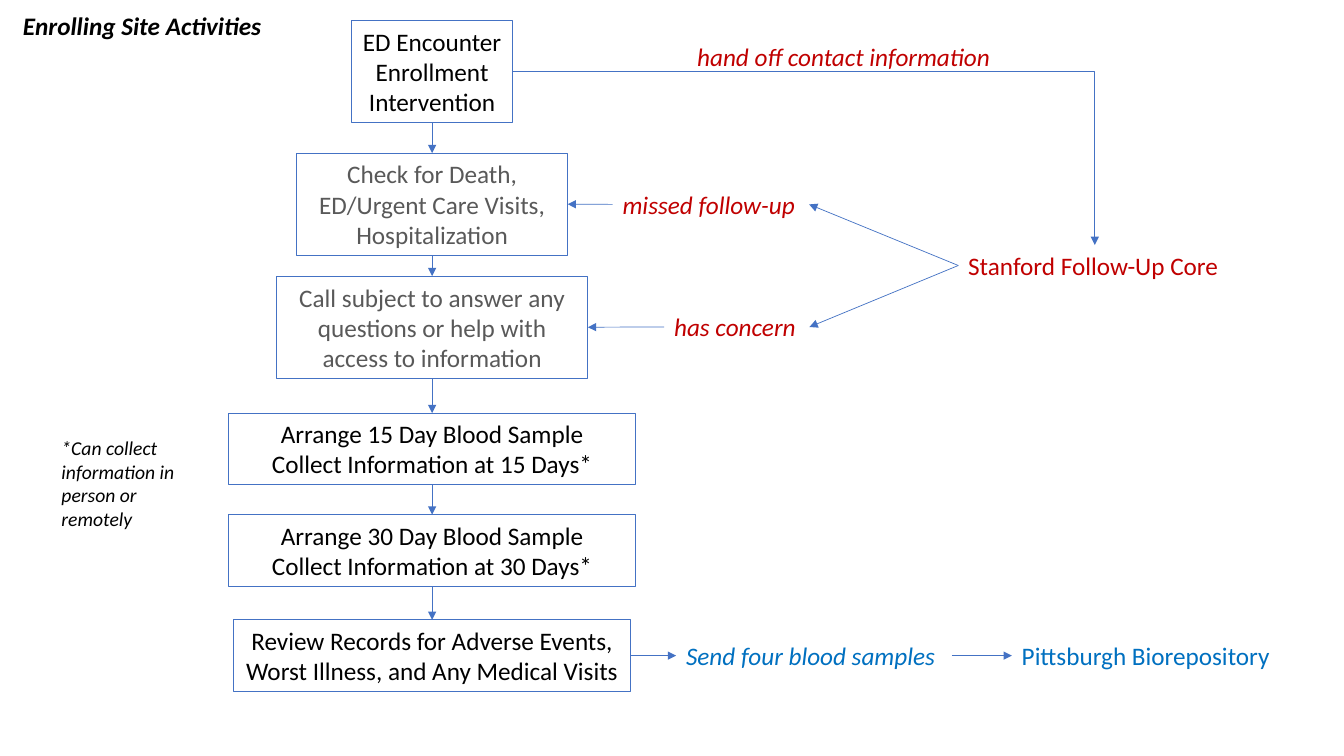
import pptx
import pptx.dml.color
import pptx.enum.shapes
import pptx.enum.text
import pptx.oxml.ns
import pptx.util
from lxml import etree

Cm, Pt = pptx.util.Cm, pptx.util.Pt
RGBColor = pptx.dml.color.RGBColor
ALIGN = pptx.enum.text.PP_ALIGN
CONNECTOR = pptx.enum.shapes.MSO_CONNECTOR
qn = pptx.oxml.ns.qn

BLACK = RGBColor(0, 0, 0)
GRAY = RGBColor(0x59, 0x59, 0x59)
RED = RGBColor(0xC0, 0, 0)
BLUE = RGBColor(0, 0x70, 0xC0)
LINE = RGBColor(0x44, 0x72, 0xC4)

TOP, LEFT, BOTTOM, RIGHT = range(4)  # connection sites of a rectangle
AXIS = 10.89  # centre of the flow column, cm
LABEL_HEIGHT = 1.03


class FlowSlide:
    font = {"name": "Calibri", "size": Pt(18)}

    def __init__(self, slide):
        self.s = slide

    def set_text(self, sp, text, color, align, wrap=True, **fmt):
        tf = sp.text_frame
        tf.word_wrap = wrap
        tf.auto_size = pptx.enum.text.MSO_AUTO_SIZE.SHAPE_TO_FIT_TEXT
        for i, line in enumerate(text.split("\n")):
            p = tf.add_paragraph() if i else tf.paragraphs[0]
            p.alignment = align
            r = p.add_run()
            r.text = line
            for key, value in {**self.font, **fmt}.items():
                setattr(r.font, key, value)
            r.font.color.rgb = color

    def box(self, text, top, width, height, color=BLACK, wrap=True):
        """Outlined step centred on the flow axis."""
        sp = self.s.shapes.add_shape(
            pptx.enum.shapes.MSO_SHAPE.RECTANGLE,
            Cm(AXIS - width / 2), Cm(top), Cm(width), Cm(height))
        sp.shadow.inherit = False
        sp.fill.background()
        sp.line.color.rgb = LINE
        sp.line.width = Pt(0.75)
        self.set_text(sp, text, color, ALIGN.CENTER, wrap)
        return sp

    def label(self, text, left, middle, width, color, height=LABEL_HEIGHT,
              wrap=False, **fmt):
        """Plain text centred vertically on a given height."""
        sp = self.s.shapes.add_textbox(
            Cm(left), Cm(middle - height / 2), Cm(width), Cm(height))
        self.set_text(sp, text, color, ALIGN.LEFT, wrap, **fmt)
        return sp

    def arrow(self, start, start_site, end, end_site, bent=False):
        kind = CONNECTOR.ELBOW if bent else CONNECTOR.STRAIGHT
        c = self.s.shapes.add_connector(kind, 0, 0, 0, 0)
        c.begin_connect(start, start_site)
        c.end_connect(end, end_site)
        c.line.color.rgb = LINE
        c.line.width = Pt(0.5)
        pr = c._element.spPr
        if bent:  # a single corner
            pr.find(qn("a:prstGeom")).set("prst", "bentConnector2")
        etree.SubElement(pr.find(qn("a:ln")), qn("a:tailEnd"), type="triangle")
        etree.SubElement(pr, qn("a:effectLst"))


def main():
    prs = pptx.Presentation()
    prs.slide_width, prs.slide_height = Cm(33.87), Cm(19.05)
    flow = FlowSlide(prs.slides.add_slide(prs.slide_layouts[6]))

    # Title and footnote
    flow.label("Enrolling Site Activities", 0.33, 0.64, 6.58, BLACK,
               bold=True, italic=True)
    flow.label("*Can collect information in person or remotely",
               1.3, 12.19, 3.43, BLACK, height=2.64, wrap=True,
               size=Pt(14), italic=True)

    # Main column of steps
    encounter = flow.box("ED Encounter\nEnrollment\nIntervention",
                         0.51, 4.04, 2.57, wrap=False)
    check = flow.box("Check for Death, ED/Urgent Care Visits, Hospitalization",
                     3.86, 6.83, 2.57, GRAY)
    call = flow.box("Call subject to answer any questions or help with "
                    "access to information", 6.96, 7.85, 2.57, GRAY)
    samples = [
        flow.box(f"Arrange {day} Day Blood Sample\n"
                 f"Collect Information at {day} Days*", top, 10.24, 1.8)
        for day, top in ((15, 10.41), (30, 12.97))]
    review = flow.box("Review Records for Adverse Events, Worst Illness, "
                      "and Any Medical Visits", 15.62, 10.01, 1.8)
    steps = [encounter, check, call, *samples, review]
    for upper, lower in zip(steps, steps[1:]):
        flow.arrow(upper, BOTTOM, lower, TOP)

    # Follow-up core and its feedback to the steps
    flow.label("hand off contact information", 17.32, 1.43, 8, RED,
               italic=True)
    core = flow.label("Stanford Follow-Up Core", 24.15, 6.69, 6.88, RED)
    flow.arrow(encounter, RIGHT, core, TOP, bent=True)
    for text, left, middle, width, step in (
            ("missed follow-up", 15.44, 5.15, 4.95, check),
            ("has concern", 16.74, 8.24, 3.66, call)):
        reason = flow.label(text, left, middle, width, RED, italic=True)
        flow.arrow(core, LEFT, reason, RIGHT)
        flow.arrow(reason, LEFT, step, RIGHT)

    # Blood samples to the repository
    send = flow.label("Send four blood samples", 17.04, 16.52, 6.95, BLUE,
                      italic=True)
    repository = flow.label("Pittsburgh Biorepository", 25.5, 16.52, 6.83,
                            BLUE)
    flow.arrow(review, RIGHT, send, LEFT)
    flow.arrow(send, RIGHT, repository, LEFT)

    prs.save("out.pptx")


if __name__ == "__main__":
    main()
